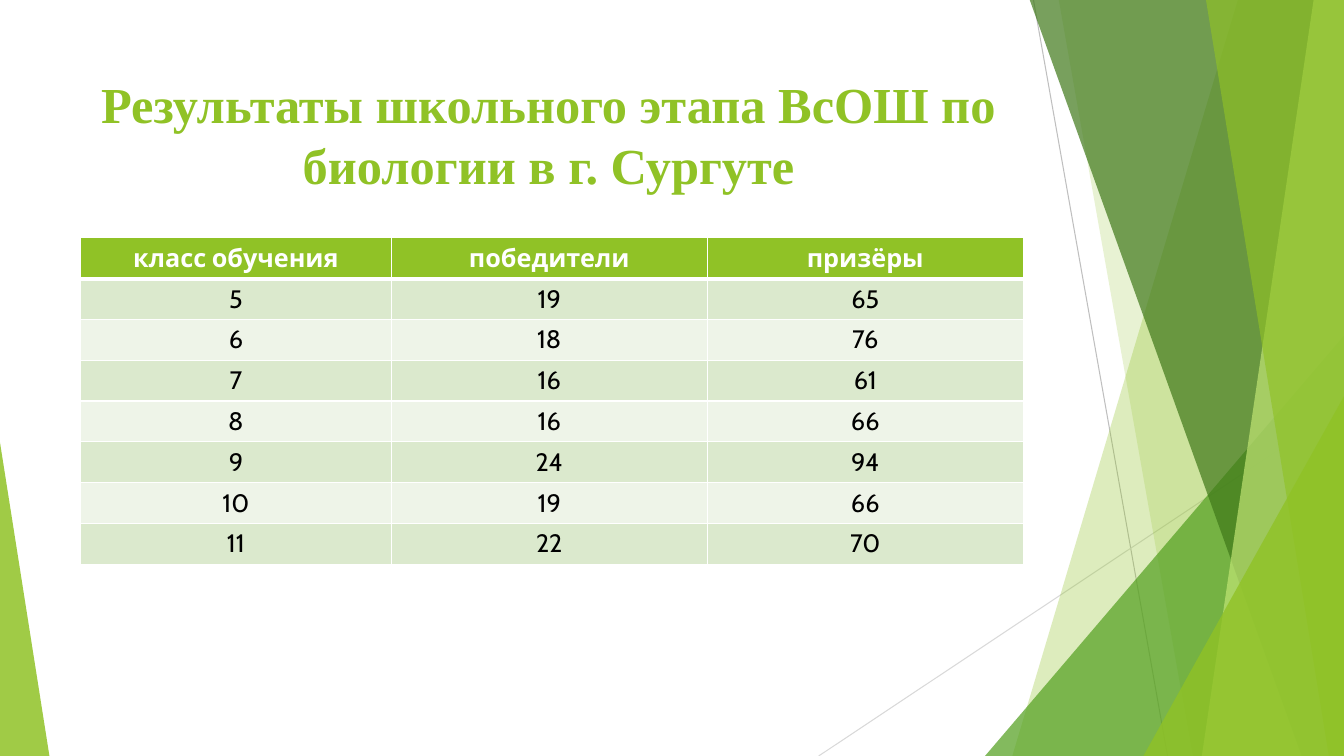
from lxml import etree
from pptx import Presentation
from pptx.dml.color import RGBColor
from pptx.enum.shapes import MSO_CONNECTOR, MSO_SHAPE
from pptx.enum.text import MSO_ANCHOR, PP_ALIGN
from pptx.oxml.ns import qn
from pptx.util import Inches, Pt

STRAIGHT = MSO_CONNECTOR.STRAIGHT
TRIANGLE = MSO_SHAPE.ISOSCELES_TRIANGLE
CENTER = PP_ALIGN.CENTER
TOP = MSO_ANCHOR.TOP

SLIDE_W, SLIDE_H = 13.33, 7.5
GREEN, WHITE, BLACK = "90C226", "FFFFFF", "000000"
BANDS = ("DBE9CD", "EEF4E8")

TITLE = "Результаты школьного этапа ВсОШ по биологии в г. Сургуте"
HEADER = ("класс обучения", "победители", "призёры")
RESULTS = (
    (5, 19, 65),
    (6, 18, 76),
    (7, 16, 61),
    (8, 16, 66),
    (9, 24, 94),
    (10, 19, 66),
    (11, 22, 70),
)


def rgb(value):
    return RGBColor.from_string(value)


def paint(sp, color, opacity):
    """Fill a facet with a translucent colour, without outline or shadow."""
    sp.shadow.inherit = False
    sp.line.fill.background()
    sp.fill.solid()
    sp.fill.fore_color.rgb = rgb(color)
    clr = sp.fill._xPr.find(qn("a:solidFill"))[0]
    etree.SubElement(clr, qn("a:alpha")).set("val", str(opacity * 1000))


def format_run(p, font, size, color, bold):
    p.alignment = CENTER
    r = p.runs[0]
    r.font.name = font
    r.font.size = Pt(size)
    r.font.bold = bold
    r.font.color.rgb = rgb(color)


def add_hairline(s, x1, y1, x2, y2, color):
    line = s.shapes.add_connector(
        STRAIGHT, Inches(x1), Inches(y1), Inches(x2), Inches(y2))
    line.line.color.rgb = rgb(color)
    line.line.width = Pt(0.75)
    etree.SubElement(line._element.spPr, qn("a:effectLst"))


def add_band(s, top_x, bottom_x, right, bottom, color, opacity):
    """Full-height facet with a slanted left edge, flush with the right side."""
    top = -0.01
    points = [(Inches(x), Inches(y)) for x, y in (
        (top_x, top), (right, top), (right, bottom), (bottom_x, bottom))]
    fb = s.shapes.build_freeform(*points[0], scale=1.0)
    fb.add_line_segments(points[1:], close=True)
    paint(fb.convert_to_shape(), color, opacity)


def add_triangle(s, x, y, w, h, apex, color, opacity):
    sp = s.shapes.add_shape(TRIANGLE, Inches(x), Inches(y), Inches(w), Inches(h))
    sp.adjustments[0] = apex
    paint(sp, color, opacity)


def add_facets(s, w, h):
    # Thin crossing lines
    add_hairline(s, w - 3.08, 0, w - 1.75, h, "BFBFBF")
    add_hairline(s, w, h - 3.47, w - 5.21, h, "D9D9D9")
    # Right-hand facets, from back to front
    add_band(s, w - 1.05, w - 3.29, w, h, GREEN, 30)
    add_band(s, w - 2.83, w - 1.5, w, h, GREEN, 20)
    add_triangle(s, w - 3.56, h - 4.17, 3.56, 4.17, 1, "54A021", 72)
    add_band(s, w - 3.12, w - 0.42, w, h, "3F7819", 70)
    add_band(s, w - 0.3, w - 1.41, w, h, "C0E474", 70)
    add_band(s, w - 1.37, w - 0.15, w, h, GREEN, 65)
    add_triangle(s, w - 1.99, h - 3.57, 1.99, 3.57, 1, GREEN, 80)
    # Left corner
    add_triangle(s, 0, h - 3.11, 0.49, 3.11, 0, GREEN, 85)


def add_title(s, x, y, w, h):
    tf = s.shapes.add_textbox(Inches(x), Inches(y), Inches(w), Inches(h)).text_frame
    tf.word_wrap = True
    tf.vertical_anchor = TOP
    p = tf.paragraphs[0]
    p.text = TITLE
    p.line_spacing = Pt(43.7)
    format_run(p, "Times New Roman", 36, GREEN, True)


def set_borders(cell, bottom_width):
    tcPr = cell._tc.get_or_add_tcPr()
    widths = {"a:lnL": 1, "a:lnR": 1, "a:lnT": 1, "a:lnB": bottom_width}
    for i, (tag, width) in enumerate(widths.items()):
        ln = etree.Element(qn(tag), w=str(Pt(width)))
        fill = etree.SubElement(ln, qn("a:solidFill"))
        etree.SubElement(fill, qn("a:srgbClr"), val=WHITE)
        tcPr.insert(i, ln)


def add_results_table(s, x, y, w, h):
    rows = (HEADER,) + RESULTS
    table = s.shapes.add_table(
        len(rows), len(HEADER), Inches(x), Inches(y), Inches(w), Inches(h)).table
    first = 3.08
    for i, col in enumerate(table.columns):
        col.width = Inches(first if i == 0 else (w - first) / 2)
    for i, values in enumerate(rows):
        table.rows[i].height = Inches(h / len(rows))
        is_header = i == 0
        for j, value in enumerate(values):
            cell = table.cell(i, j)
            cell.fill.solid()
            cell.fill.fore_color.rgb = rgb(GREEN if is_header else BANDS[(i - 1) % 2])
            set_borders(cell, 3 if is_header else 1)
            p = cell.text_frame.paragraphs[0]
            p.text = str(value)
            format_run(p, "Cabin", 18, WHITE if is_header else BLACK, is_header)


def main():
    prs = Presentation()
    prs.slide_width, prs.slide_height = Inches(SLIDE_W), Inches(SLIDE_H)
    s = prs.slides.add_slide(prs.slide_layouts[6])
    add_facets(s, SLIDE_W, SLIDE_H)
    add_title(s, 0.74, 0.67, 9.4, 1.44)
    add_results_table(s, 0.8, 2.36, 9.35, 3.24)
    prs.save("out.pptx")


if __name__ == "__main__":
    main()
